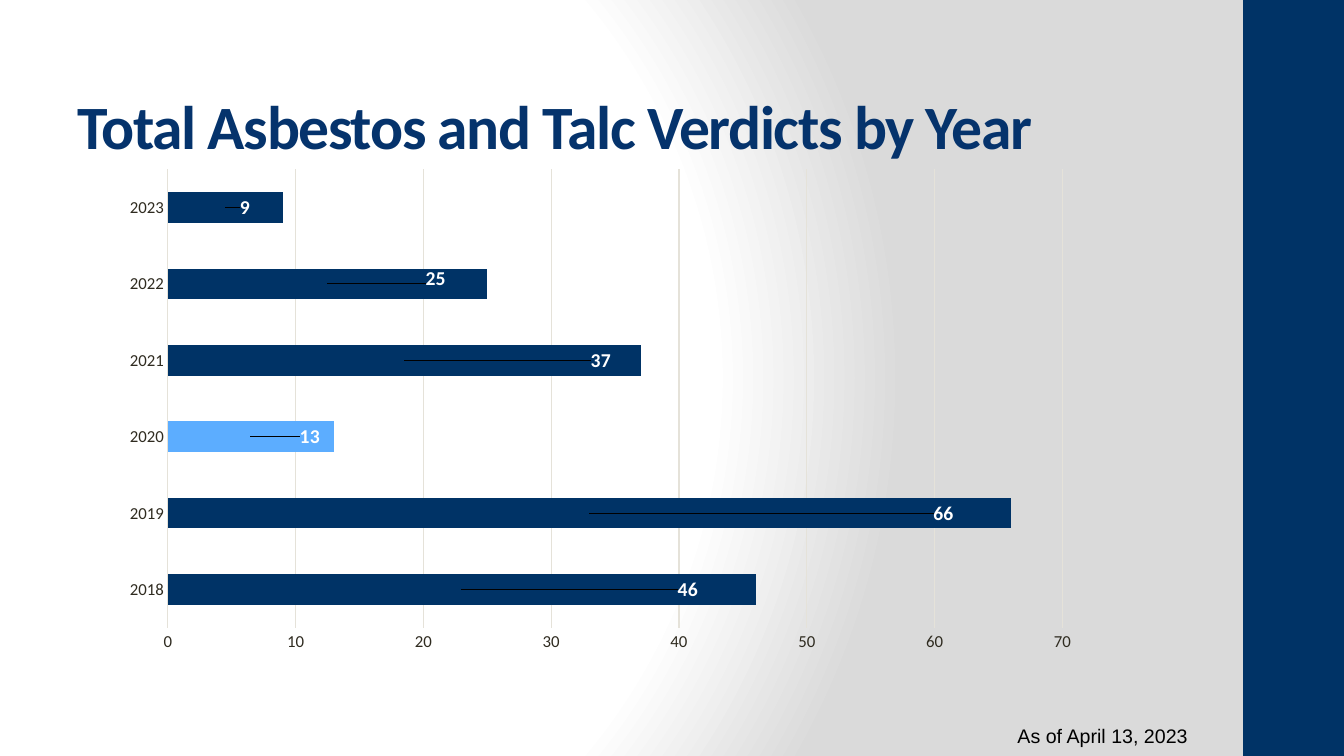
from lxml import etree
from pptx import Presentation
from pptx.chart.data import CategoryChartData
from pptx.dml.color import RGBColor
from pptx.enum import chart as ch, shapes, text
from pptx.oxml import ns, parse_xml
from pptx.util import Inches, Pt

TITLE = "Total Asbestos and Talc Verdicts by Year"
DATE_NOTE = "As of April 13, 2023"
VERDICTS = [("2018", 46), ("2019", 66), ("2020", 13),
            ("2021", 37), ("2022", 25), ("2023", 9)]
LABEL_SHIFTS = [(0.23, 0), (0.36, 0), (0.06, 0), (0.2, 0), (0.11, -0.01), (0.02, 0)]
HIGHLIGHT_YEAR = "2020"
PLOT_AREA = {"x": 0.06, "y": 0.02, "w": 0.91, "h": 0.91}
SIDE_BANDS = [(12.33, 0, 1, 7.5), (12.33, 6, 1, 0.75)]
GRADIENT_STOPS = [(0, "FFFFFF"), (75, "FFFFFF"), (100, "DADADA")]
GRADIENT_CENTER = {"l": 20, "t": 50, "r": 100, "b": 50}

NAVY = RGBColor(0x00, 0x33, 0x66)
TITLE_BLUE = RGBColor(0x05, 0x33, 0x6C)
SKY = RGBColor(0x5C, 0xAD, 0xFF)
INK = RGBColor(0x2F, 0x2B, 0x20)
GRID = RGBColor(0xE5, 0xE2, 0xD9)
WHITE = RGBColor(0xFF, 0xFF, 0xFF)
BLACK = RGBColor(0, 0, 0)


def style_font(font, name, size, color, bold=False):
    font.name = name
    font.size = Pt(size)
    font.color.rgb = color
    font.bold = bold


def paint_background(page):
    page.background.fill.gradient()
    old = next(page._element.iter(ns.qn("a:gradFill")))
    stops = "".join(f'<a:gs pos="{pos * 1000}"><a:srgbClr val="{color}"/></a:gs>'
                    for pos, color in GRADIENT_STOPS)
    center = " ".join(f'{side}="{share * 1000}"' for side, share in GRADIENT_CENTER.items())
    old.getparent().replace(old, parse_xml(
        f'<a:gradFill {ns.nsdecls("a")} rotWithShape="1"><a:gsLst>{stops}</a:gsLst>'
        f'<a:path path="circle"><a:fillToRect {center}/></a:path></a:gradFill>'))


def add_band(page, bounds):
    band = page.shapes.add_shape(shapes.MSO_SHAPE.RECTANGLE, *map(Inches, bounds))
    band.shadow.inherit = False
    band.fill.solid()
    band.fill.fore_color.rgb = NAVY
    band.line.fill.background()


def add_text(page, bounds, words):
    box = page.shapes.add_textbox(*map(Inches, bounds))
    box.text_frame.word_wrap = True
    para = box.text_frame.paragraphs[0]
    para.text = words
    return box.text_frame, para


def manual_layout(settings):
    layout = etree.Element(ns.qn("c:layout"))
    manual = etree.SubElement(layout, ns.qn("c:manualLayout"))
    for tag, value in settings.items():
        etree.SubElement(manual, ns.qn(f"c:{tag}")).set("val", str(value))
    return layout


def style_axis(axis):
    axis.major_tick_mark = axis.minor_tick_mark = ch.XL_TICK_MARK.NONE
    style_font(axis.tick_labels.font, "Calibri", 12, INK)
    axis.format.line.fill.background()


def add_verdict_chart(page):
    data = CategoryChartData()
    data.categories = [year for year, count in VERDICTS]
    data.add_series("Series 1", [count for year, count in VERDICTS])
    chart = page.shapes.add_chart(
        ch.XL_CHART_TYPE.BAR_STACKED, Inches(1.08), Inches(1.58),
        Inches(9.75), Inches(5), data).chart
    chart.has_legend = chart.has_title = False
    style_font(chart.font, "Calibri", 10, INK)

    style_axis(chart.category_axis)
    values = chart.value_axis
    style_axis(values)
    values.minimum_scale, values.maximum_scale, values.major_unit = 0, 70, 10
    values.has_major_gridlines = True
    values.major_gridlines.format.line.color.rgb = GRID
    values.major_gridlines.format.line.width = Pt(0.75)

    plot = chart.plots[0]
    plot.gap_width, plot.overlap, plot.vary_by_categories = 150, 100, False
    series = plot.series[0]
    series.format.fill.solid()
    series.format.fill.fore_color.rgb = NAVY
    for index, (year, count) in enumerate(VERDICTS):
        point = series.points[index]
        if year == HIGHLIGHT_YEAR:
            point.format.fill.solid()
            point.format.fill.fore_color.rgb = SKY
        style_font(point.data_label.font, "Calibri", 14, WHITE, True)
    for label, (dx, dy) in zip(series._element.iter(ns.qn("c:dLbl")), LABEL_SHIFTS):
        label.insert(1, manual_layout({"x": dx, "y": dy}))

    area = next(chart._chartSpace.iter(ns.qn("c:plotArea")))
    for old in area.findall(ns.qn("c:layout")):
        area.remove(old)
    area.insert(0, manual_layout({"layoutTarget": "inner", "xMode": "edge",
                                  "yMode": "edge", **PLOT_AREA}))


def main():
    deck = Presentation()
    deck.slide_width, deck.slide_height = Inches(13.33), Inches(7.5)
    page = deck.slides.add_slide(deck.slide_layouts[6])
    paint_background(page)
    for bounds in SIDE_BANDS:
        add_band(page, bounds)

    frame, para = add_text(page, (0.67, 0.92, 11.11, 0.63), TITLE)
    frame.vertical_anchor = text.MSO_ANCHOR.MIDDLE
    style_font(para.font, "Calibri", 44, TITLE_BLUE, True)
    para.runs[0].font._element.set("spc", "-100")

    frame, para = add_text(page, (9.29, 7.13, 2.59, 0.34), DATE_NOTE)
    frame.auto_size = text.MSO_AUTO_SIZE.SHAPE_TO_FIT_TEXT
    para.alignment = text.PP_ALIGN.RIGHT
    style_font(para.font, "Arial", 14, BLACK)

    add_verdict_chart(page)
    deck.save("out.pptx")


if __name__ == "__main__":
    main()
